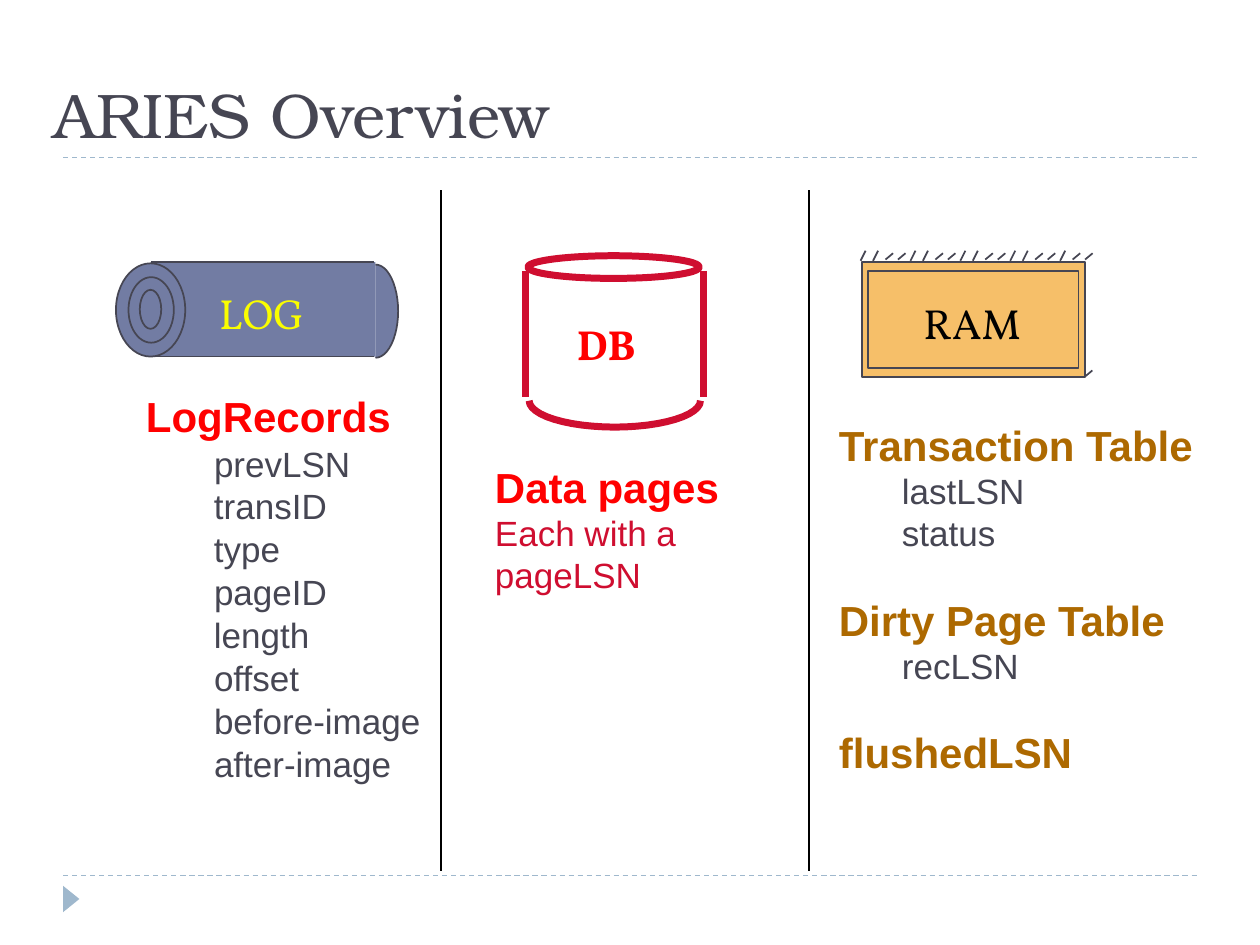
from math import cos, pi, sin

from lxml.etree import SubElement
from pptx import Presentation
from pptx.dml.color import RGBColor
from pptx.enum.dml import MSO_LINE
from pptx.enum.shapes import MSO_CONNECTOR, MSO_SHAPE
from pptx.enum.text import MSO_ANCHOR, MSO_AUTO_SIZE
from pptx.oxml.ns import qn
from pptx.util import Inches, Pt

COLS, ROWS = 1000, 750
CELL = Inches(10) / COLS
INK, RED, WINE = "464653", "FF0000", "CF0E30"
SLATE, SAND, BROWN, MIST = "727CA3", "F6BF69", "AD6900", "9FB8CD"

HEAD = {"name": "Arial", "size": Pt(24), "bold": True}
BODY = {"name": "Arial", "size": Pt(20), "bold": False}
LABEL = {"name": "Vollkorn", "size": Pt(24), "bold": False}
TITLE = {"name": "TeX Gyre Bonum", "size": Pt(36), "bold": False}
FIT = {"word_wrap": False, "auto_size": MSO_AUTO_SIZE.SHAPE_TO_FIT_TEXT}
BASE = {"word_wrap": True, "vertical_anchor": MSO_ANCHOR.BOTTOM}


def color(code):
    return RGBColor.from_string(code)


def apply(item, style):
    for name, value in style.items():
        setattr(item, name, value)


def place(box, x, y, w, h):
    return [round(n * CELL) for n in (box[0] + x, box[1] + y, w, h)]


def paint(shape, fill, line, width):
    shape.shadow.inherit = False
    if fill:
        shape.fill.solid()
        shape.fill.fore_color.rgb = color(fill)
    else:
        shape.fill.background()
    if line:
        shape.line.color.rgb = color(line)
        shape.line.width = Pt(width)
    else:
        shape.line.fill.background()


def solid(root, box, kind, area, fill=None, line=INK, width=1):
    shape = root.add_shape(kind, *place(box, *area))
    paint(shape, fill, line, width)
    return shape


def rule(root, box, ends, hue=INK, width=1, dash=None):
    spots = place(box, *ends[:2], 0, 0)[:2] + place(box, *ends[2:], 0, 0)[:2]
    line = root.add_connector(MSO_CONNECTOR.STRAIGHT, *spots)
    SubElement(line._element.spPr, qn("a:effectLst"))
    line.line.color.rgb = color(hue)
    line.line.width = Pt(width)
    if dash:
        line.line.dash_style = dash


def arc(root, box, mid, radii, start, fill=None, line=INK, width=1):
    spots = []
    for step in range(25):
        turn = start + pi * step / 24
        x, y = mid[0] + radii[0] * cos(turn), mid[1] + radii[1] * sin(turn)
        spots.append(tuple(place(box, x, y, 0, 0)[:2]))
    path = root.build_freeform(*spots[0], scale=1.0)
    path.add_line_segments(spots[1:], close=False)
    paint(path.convert_to_shape(), fill, line, width)


def write(root, box, area, lines, frame=FIT):
    text = root.add_textbox(*place(box, *area)).text_frame
    apply(text, frame)
    for i, (words, font, hue, *gap) in enumerate(lines):
        para = text.add_paragraph() if i else text.paragraphs[0]
        if gap:
            para.space_before = Pt(gap[0])
        run = para.add_run()
        run.text = words
        apply(run.font, font)
        run.font.color.rgb = color(hue)


def draw_frame(root, box):
    for y in (695, 125):
        rule(root, box, (50, y, COLS - 50, y), MIST, 0.75, MSO_LINE.DASH)
    mark = solid(root, box, MSO_SHAPE.ISOSCELES_TRIANGLE, (46, 707, 21, 13), MIST, None)
    mark.rotation = 90
    write(root, box, (33, 33, 908, 92), [("ARIES Overview", TITLE, INK)], BASE)


def draw_db(root, box):
    drum = root.add_group_shape().shapes
    pen = {"line": WINE, "width": 4}
    solid(drum, box, MSO_SHAPE.OVAL, (69, 52, 136, 18), **pen)
    for x in (67, 208):
        rule(drum, box, (x, 64, x, 164), WINE, 4)
    arc(drum, box, (138, 167), (68, 21), 0, **pen)
    write(root, box, (98, 97, 70, 50), [("DB", LABEL | {"bold": True}, RED)])
    write(root, box, (33, 210, 200, 151), [
        ("Data pages", HEAD, RED),
        ("Each with a", BODY, WINE),
        ("pageLSN", BODY, WINE),
    ])


def draw_ram(root, box):
    solid(root, box, MSO_SHAPE.RECTANGLE, (42, 57, 177, 91), SAND)
    for i, tilt in enumerate("//--//--//--//--/--"):
        x = 41 + 9.9 * i
        ends = (x, 56, x + 4, 48) if tilt == "/" else (x, 55, x + 6, 50)
        rule(root, box, ends)
    rule(root, box, (219, 148, 225, 143))
    solid(root, box, MSO_SHAPE.RECTANGLE, (47, 64, 167, 77))
    write(root, box, (81, 80, 97, 51), [("RAM", LABEL, "000000")])
    write(root, box, (14, 177, 303, 333), [
        ("Transaction Table", HEAD, BROWN),
        ("\tlastLSN", BODY, INK),
        ("\tstatus", BODY, INK),
        ("Dirty Page Table", HEAD, BROWN, 23),
        ("\trecLSN", BODY, INK),
        ("flushedLSN", HEAD, BROWN, 23),
    ])


def draw_log(root, box):
    fields = {
        "prevLSN": 129, "transID": 110, "type": 74, "pageID": 111,
        "length": 97, "offset": 89, "before-image": 185, "after-image": 161,
    }
    names = root.add_group_shape().shapes
    for i, (name, width) in enumerate(fields.items()):
        write(names, box, (160, 195 + 34 * i, width, 44), [(name, BODY, INK)])
    write(root, box, (106, 154, 216, 51), [("LogRecords", HEAD, RED)])
    roll = root.add_group_shape().shapes
    solid(roll, box, MSO_SHAPE.RECTANGLE, (120, 57, 178, 75), SLATE, None)
    solid(roll, box, MSO_SHAPE.OVAL, (92, 58, 55, 74), SLATE)
    for y in (57, 132):
        rule(roll, box, (120, y, 297, y))
    arc(roll, box, (298, 96), (18, 37), -pi / 2, SLATE)
    for ring in ((102, 69, 36, 52), (111, 79, 17, 31)):
        solid(roll, box, MSO_SHAPE.OVAL, ring)
    write(root, box, (164, 72, 90, 51), [("LOG", LABEL, "FAFD00")])


def main():
    deck = Presentation()
    deck.slide_width = round(COLS * CELL)
    deck.slide_height = round(ROWS * CELL)
    root = deck.slides.add_slide(deck.slide_layouts[6]).shapes
    page = (0, 0)
    top, base = 151, 691
    left, right = 350, 642
    draw_frame(root, page)
    draw_db(root, (left, top))
    draw_ram(root, (right, top))
    draw_log(root, (0, top))
    for x in (left, right):
        rule(root, page, (x, top, x, base), "000000")
    deck.save("out.pptx")


if __name__ == "__main__":
    main()
